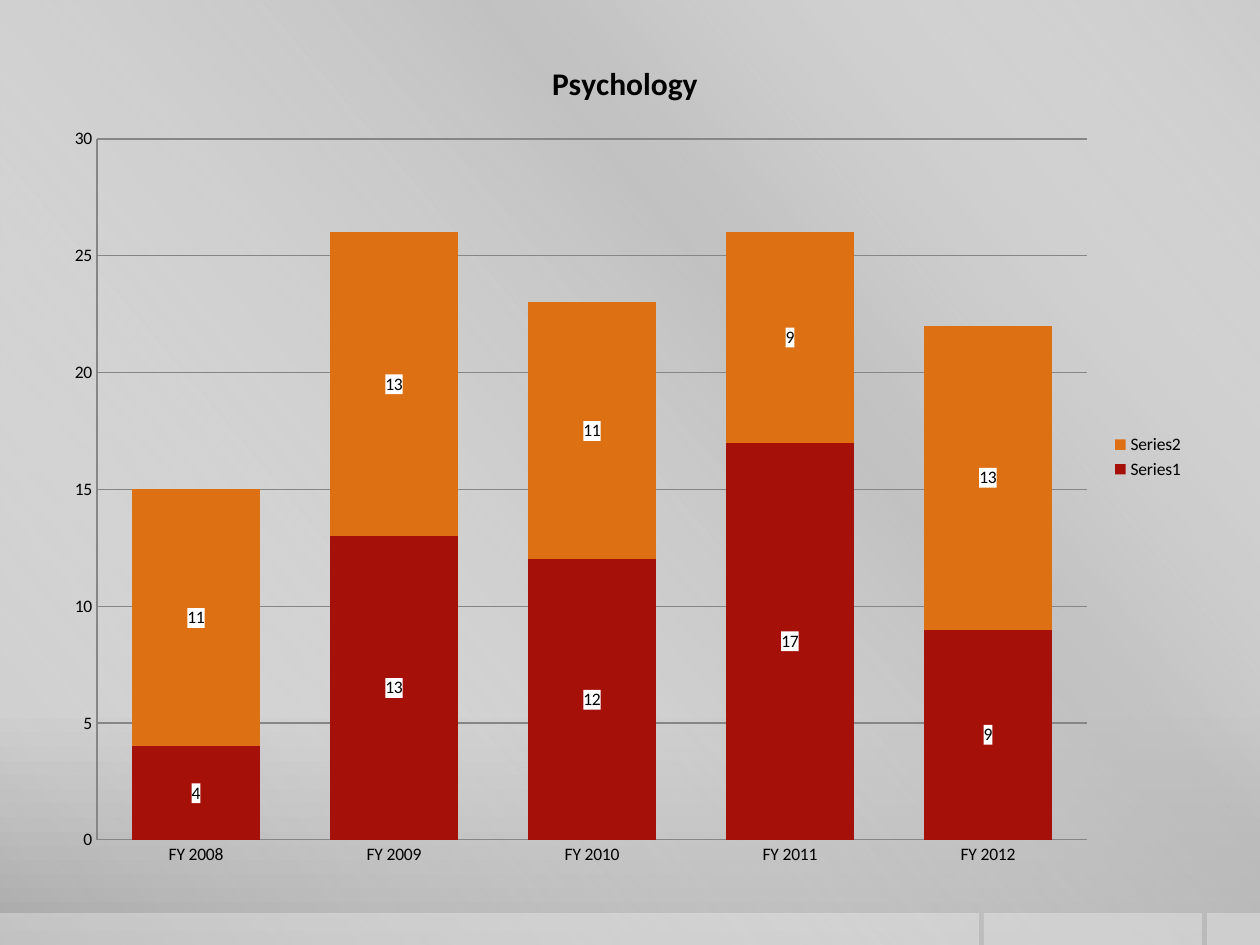
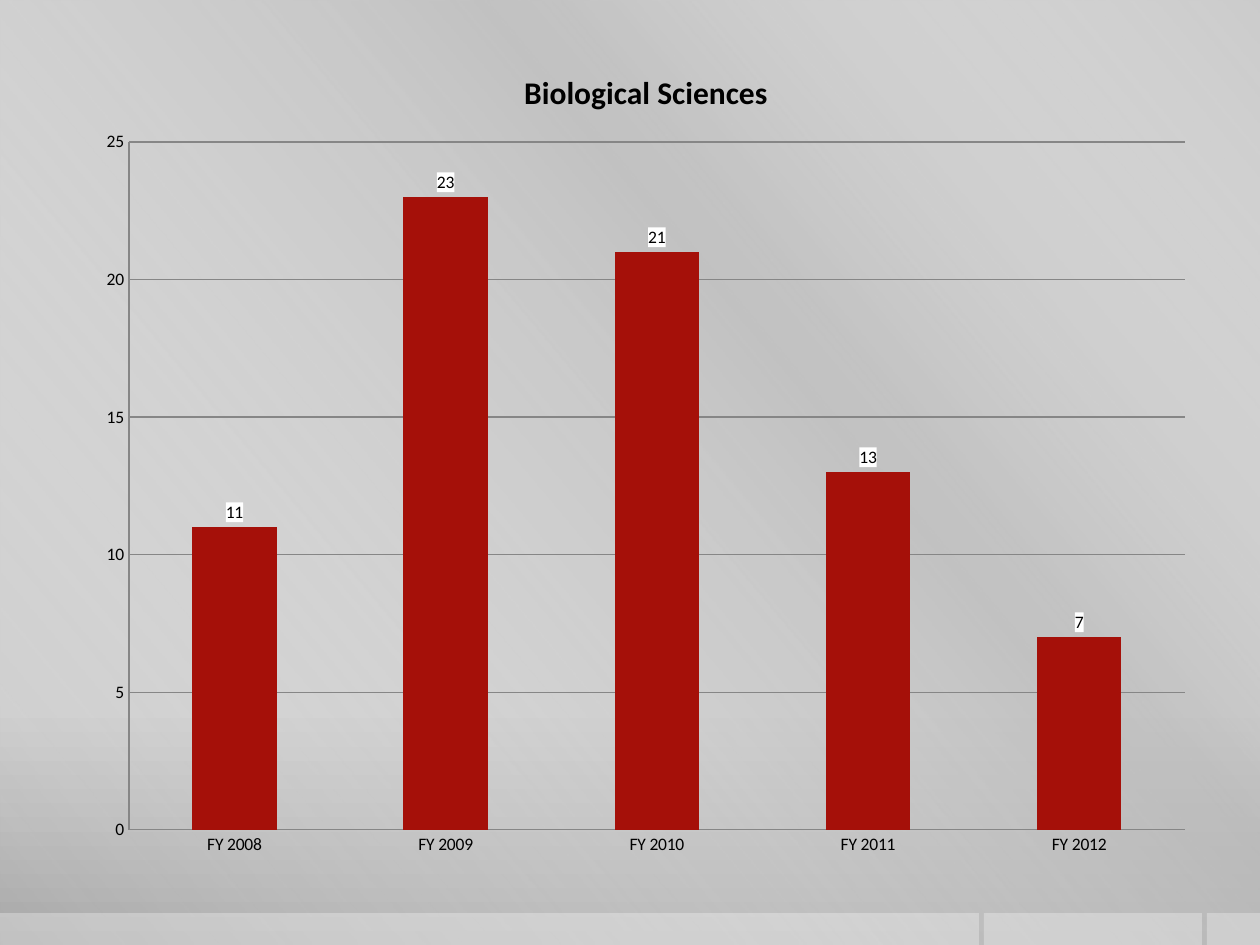
from lxml.etree import SubElement
from pptx import Presentation
from pptx.chart.data import CategoryChartData
from pptx.dml.color import RGBColor
from pptx.enum.chart import XL_CHART_TYPE, XL_LABEL_POSITION, XL_LEGEND_POSITION, XL_TICK_MARK
from pptx.enum.shapes import MSO_SHAPE
from pptx.oxml.ns import qn
from pptx.util import Pt

PX = 914400 // 126
SLIDE_WIDTH, SLIDE_HEIGHT = 1260, 945
FONT = "Calibri"
COLORS = {
    "text": "000000",
    "white": "FFFFFF",
    "line": "868686",
    "red": "A51009",
    "orange": "DE7014",
    "light": "CBCBCB",
    "middle": "C8C8C8",
    "dark": "A7A7A7",
    "sheen": "BFBFBF",
}
BACKGROUND_STOPS = [(0, "light", 100), (76, "middle", 100), (100, "dark", 100)]
SHEEN_STOPS = [(0, "white", 0), (34, "sheen", 61), (38, "sheen", 76), (100, "white", 0)]
FOOTER_TILES = [(0, 979), (984, 218), (1207, 53)]
FOOTER_TOP = 913
YEARS = [f"FY {year}" for year in range(2008, 2013)]


def color(name):
    return RGBColor.from_string(COLORS[name])


def set_alpha(color_element, percent):
    SubElement(color_element, qn("a:alpha")).set("val", str(percent * 1000))


def set_gradient(fill, element, stops, angle):
    fill.gradient()
    fill.gradient_angle = 360 - angle
    stop_list = next(element.iter(qn("a:gsLst")))
    for stop in list(stop_list):
        stop_list.remove(stop)
    for position, name, alpha in stops:
        stop = SubElement(stop_list, qn("a:gs"))
        stop.set("pos", str(position * 1000))
        color_element = SubElement(stop, qn("a:srgbClr"))
        color_element.set("val", COLORS[name])
        if alpha < 100:
            set_alpha(color_element, alpha)


def add_panel(slide, box):
    shape = slide.shapes.add_shape(MSO_SHAPE.RECTANGLE, *(value * PX for value in box))
    shape.shadow.inherit = False
    shape.line.fill.background()
    return shape


def add_backdrop(slide):
    set_gradient(slide.background.fill, slide._element, BACKGROUND_STOPS, 90)
    sheen = add_panel(slide, (0, 0, SLIDE_WIDTH, SLIDE_HEIGHT))
    set_gradient(sheen.fill, sheen._element, SHEEN_STOPS, 140)
    for left, width in FOOTER_TILES:
        tile = add_panel(slide, (left, FOOTER_TOP, width, SLIDE_HEIGHT - FOOTER_TOP))
        tile.fill.solid()
        tile.fill.fore_color.rgb = color("white")
        set_alpha(next(tile._element.spPr.iter(qn("a:srgbClr"))), 30)


def set_plot_area(chart, box, plot_box):
    plot_area = chart._chartSpace.chart.plotArea
    for old_layout in plot_area.findall(qn("c:layout")):
        plot_area.remove(old_layout)
    layout = SubElement(plot_area, qn("c:layout"))
    plot_area.insert(0, layout)
    manual = SubElement(layout, qn("c:manualLayout"))
    left, top, width, height = plot_box
    settings = {
        "layoutTarget": "inner",
        "xMode": "edge",
        "yMode": "edge",
        "x": round(left / box[2], 4),
        "y": round(top / box[3], 4),
        "w": round(width / box[2], 4),
        "h": round(height / box[3], 4),
    }
    for tag, value in settings.items():
        SubElement(manual, qn(f"c:{tag}")).set("val", str(value))


def style_axes(chart, maximum):
    for axis in (chart.category_axis, chart.value_axis):
        axis.major_tick_mark = XL_TICK_MARK.NONE
        axis.minor_tick_mark = XL_TICK_MARK.NONE
        axis.format.line.color.rgb = color("line")
        axis.format.line.width = Pt(0.75)
    value_axis = chart.value_axis
    value_axis.minimum_scale, value_axis.maximum_scale = 0, maximum
    value_axis.major_unit = 5
    value_axis.has_major_gridlines = True
    value_axis.major_gridlines.format.line.color.rgb = color("line")
    value_axis.major_gridlines.format.line.width = Pt(0.75)


def style_series(series, fill_name, label_position):
    series.format.fill.solid()
    series.format.fill.fore_color.rgb = color(fill_name)
    series.invert_if_negative = False
    labels = series.data_labels
    labels.show_value = True
    labels.position = label_position
    labels.font.size = Pt(10)
    labels.font.name = FONT
    labels.font.color.rgb = color("text")
    properties = labels._element.get_or_add_txPr()
    label_shape = SubElement(labels._element, qn("c:spPr"))
    properties.addprevious(label_shape)
    label_fill = SubElement(label_shape, qn("a:solidFill"))
    SubElement(label_fill, qn("a:srgbClr")).set("val", COLORS["white"])


def add_chart(slide, box, plot_box, title, series_values, stacked, maximum):
    data = CategoryChartData()
    data.categories = YEARS
    for name, values in series_values.items():
        data.add_series(name, values)
    kind = XL_CHART_TYPE.COLUMN_STACKED if stacked else XL_CHART_TYPE.COLUMN_CLUSTERED
    chart = slide.shapes.add_chart(kind, *(value * PX for value in box), data).chart
    chart.font.size = Pt(10)
    chart.font.name = FONT
    chart.font.color.rgb = color("text")

    chart.has_title = True
    chart.chart_title.include_in_layout = False
    paragraph = chart.chart_title.text_frame.paragraphs[0]
    paragraph.text = title
    font = paragraph.runs[0].font
    font.size, font.bold, font.name = Pt(18), True, FONT
    font.color.rgb = color("text")

    chart.has_legend = stacked
    if stacked:
        chart.legend.position = XL_LEGEND_POSITION.RIGHT
        chart.legend.include_in_layout = False
    plot = chart.plots[0]
    plot.vary_by_categories = False
    plot.gap_width = 55 if stacked else 150
    plot.overlap = 100 if stacked else 0
    position = XL_LABEL_POSITION.CENTER if stacked else XL_LABEL_POSITION.OUTSIDE_END
    for series, fill_name in zip(plot.series, ("red", "orange")):
        style_series(series, fill_name, position)
    style_axes(chart, maximum)
    set_plot_area(chart, box, plot_box)


def add_chart_slide(presentation, **chart_settings):
    slide = presentation.slides.add_slide(presentation.slide_layouts[6])
    add_backdrop(slide)
    add_chart(slide, **chart_settings)


def main():
    presentation = Presentation()
    presentation.slide_width = SLIDE_WIDTH * PX
    presentation.slide_height = SLIDE_HEIGHT * PX
    add_chart_slide(
        presentation,
        box=(53, 32, 1144, 850),
        plot_box=(44, 107, 990, 701),
        title="Psychology",
        series_values={"Series1": (4, 13, 12, 17, 9), "Series2": (11, 13, 11, 9, 13)},
        stacked=True,
        maximum=30,
    )
    add_chart_slide(
        presentation,
        box=(84, 42, 1124, 829),
        plot_box=(45, 100, 1056, 688),
        title="Biological Sciences",
        series_values={"Series 1": (11, 23, 21, 13, 7)},
        stacked=False,
        maximum=25,
    )
    presentation.save("out.pptx")


if __name__ == "__main__":
    main()
